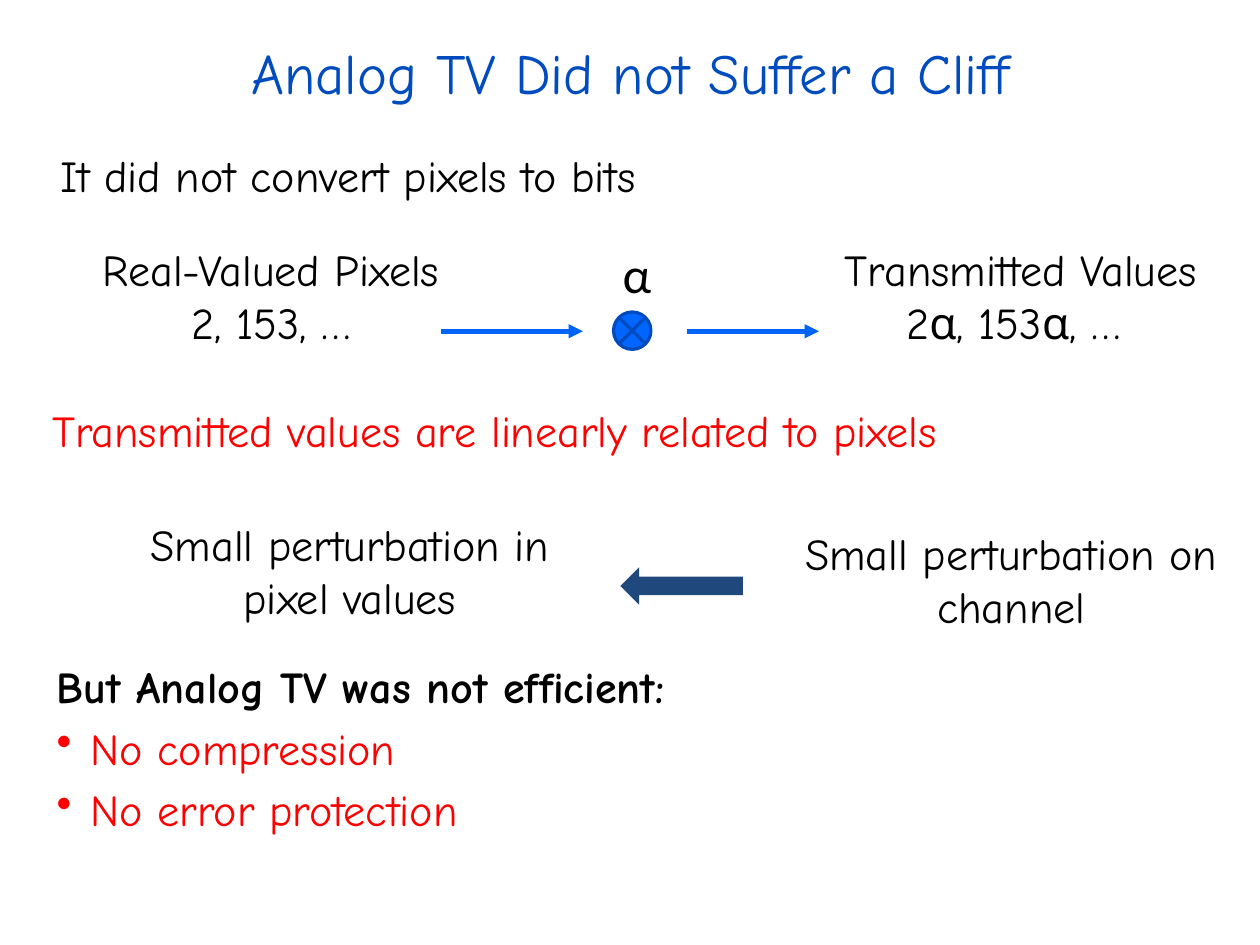
from lxml import etree
from pptx import Presentation
from pptx import util as u
from pptx.dml.color import RGBColor
from pptx.enum import shapes, text
from pptx.oxml import ns

PX = 9144
BLACK, RED, TITLE_BLUE = "000000", "FF0000", "004CBF"
ARROW_BLUE, JUNCTION_BLUE, JUNCTION_EDGE, NAVY = "0064F9", "0066FF", "004BBD", "1F497D"
LEFT, CENTER = text.PP_ALIGN.LEFT, text.PP_ALIGN.CENTER


def px(length):
    return u.Emu(length * PX)


def color(value):
    return RGBColor.from_string(value)


def style(paragraph, size=28, hue=BLACK, font="Comic Neue", bold=False):
    paragraph.font.name = font
    paragraph.font.size = u.Pt(size)
    paragraph.font.bold = bold
    paragraph.font.color.rgb = color(hue)


def add_text(slide, box, lines, align=LEFT, wrap=True, anchor=text.MSO_ANCHOR.TOP, **font):
    frame = slide.shapes.add_textbox(*map(px, box)).text_frame
    frame.word_wrap = wrap
    frame.vertical_anchor = anchor
    frame.margin_left = frame.margin_right = px(11)
    frame.margin_top = frame.margin_bottom = px(6)
    frame.text = lines
    for paragraph in frame.paragraphs:
        paragraph.alignment = align
        style(paragraph, **font)
    return frame


def add_bullet(frame, words):
    paragraph = frame.add_paragraph()
    paragraph.text = words
    paragraph.space_before = u.Pt(5.6)
    style(paragraph, hue=RED)
    properties = paragraph._p.get_or_add_pPr()
    properties.set("marL", str(px(30)))
    properties.set("indent", str(-px(30)))
    bullet = etree.SubElement(properties, ns.qn("a:buChar"))
    bullet.set("char", "•")
    properties.insert_element_before(bullet, "a:tabLst", "a:defRPr", "a:extLst")


def add_arrow(slide, start, end, y):
    arrow = slide.shapes.add_connector(
        shapes.MSO_CONNECTOR.STRAIGHT, px(start), px(y), px(end), px(y))
    arrow.line.color.rgb = color(ARROW_BLUE)
    arrow.line.width = u.Pt(3)
    head = etree.SubElement(arrow.line._get_or_add_ln(), ns.qn("a:tailEnd"))
    head.set("type", "triangle")
    etree.SubElement(arrow._element.spPr, ns.qn("a:effectLst"))


def add_symbol(slide, kind, box, fill, edge=None):
    shape = slide.shapes.add_shape(kind, *map(px, box))
    shape.shadow.inherit = False
    shape.fill.solid()
    shape.fill.fore_color.rgb = color(fill)
    if edge:
        shape.line.color.rgb = color(edge)
        shape.line.width = u.Pt(2)
    else:
        shape.line.fill.background()


def main():
    presentation = Presentation()
    presentation.slide_width, presentation.slide_height = px(1111), px(833)
    slide = presentation.slides.add_slide(presentation.slide_layouts[6])

    add_text(slide, (6, -6, 1100, 139), "Analog TV Did not Suffer a Cliff", CENTER,
             anchor=text.MSO_ANCHOR.MIDDLE, size=36, hue=TITLE_BLUE)
    add_text(slide, (42, 125, 1056, 58), "It did not convert pixels to bits")

    add_text(slide, (39, 208, 400, 105), "Real-Valued Pixels\n2, 153, …", CENTER)
    add_text(slide, (689, 208, 422, 108), "Transmitted Values\n2α, 153α, … ", CENTER)
    for start, end in ((389, 514), (606, 722)):
        add_arrow(slide, start, end, 292)
    add_text(slide, (538, 208, 46, 64), "α", CENTER, wrap=False, size=32, font="Calibri")
    add_symbol(slide, shapes.MSO_SHAPE.FLOWCHART_SUMMING_JUNCTION,
               (541, 275, 33, 33), JUNCTION_BLUE, JUNCTION_EDGE)

    add_text(slide, (35, 350, 1079, 75),
             "Transmitted values are linearly related to pixels", hue=RED)

    add_text(slide, (89, 450, 439, 117), "Small perturbation in pixel values", CENTER)
    add_symbol(slide, shapes.MSO_SHAPE.LEFT_ARROW, (547, 500, 108, 33), NAVY)
    add_text(slide, (672, 458, 439, 117), "Small perturbation on channel", CENTER)

    drawbacks = add_text(slide, (39, 575, 1017, 217),
                         "But Analog TV was not efficient:", bold=True)
    for words in ("No compression", "No error protection"):
        add_bullet(drawbacks, words)

    presentation.save("out.pptx")


if __name__ == "__main__":
    main()
